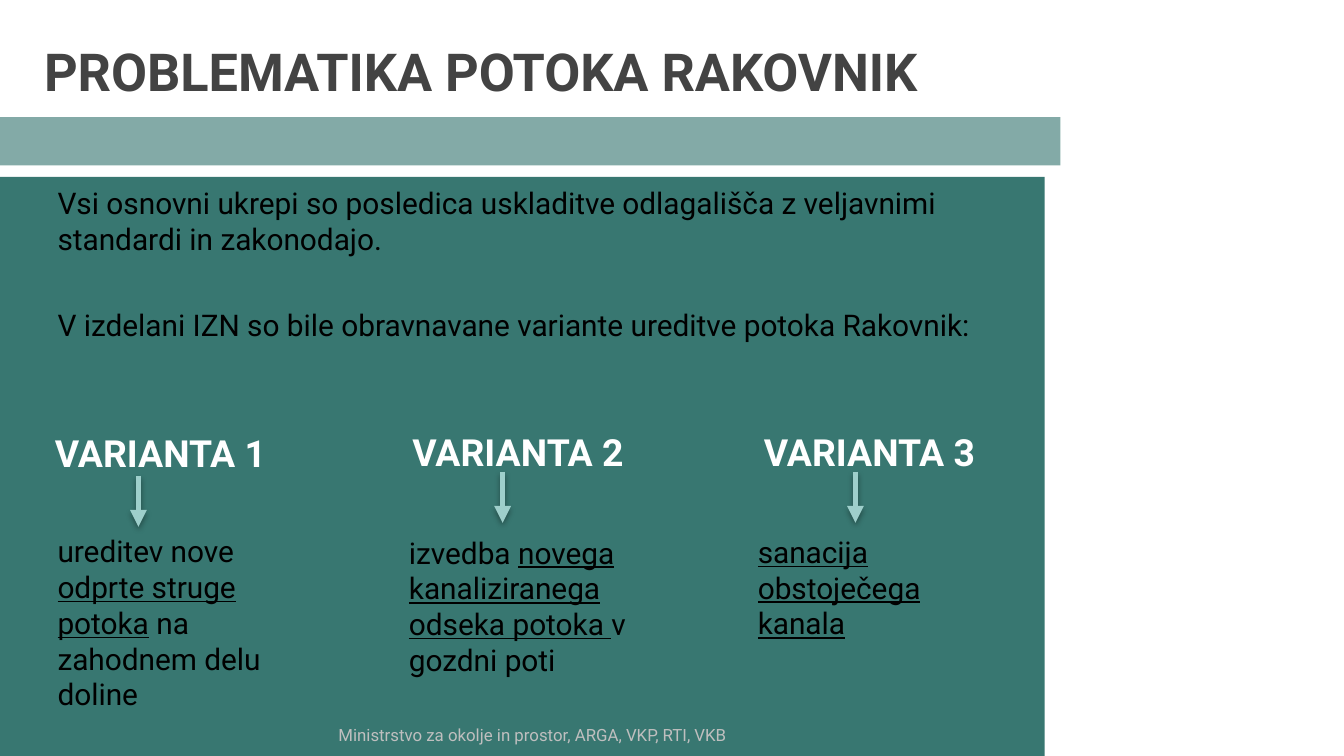
import pptx
import pptx.dml.color
import pptx.enum.shapes
import pptx.enum.text
import pptx.oxml
import pptx.oxml.ns
import pptx.util

COLORS = {
    "title": "434343",
    "teal": "387771",
    "arrow": "9ECFCB",
    "body": "000000",
    "heading": "FFFFFF",
    "footer": "BFBFBF",
    "shadow": "000000",
}
FONT = "Roboto"
COLUMNS, ROWS = 100, 56.25
CELL = 0.1
ANCHOR = pptx.enum.text.MSO_ANCHOR

VARIANTS = [
    ("VARIANTA 1", (3.1, 29.25, 20, 34.5), (7.2, 6.15), (0.2, 9.4),
     [("ureditev nove ", False), ("odprte struge potoka", True),
      (" na zahodnem delu doline", False)]),
    ("VARIANTA 2", (29.7, 29.15, 20, 33), (7.7, 5.95), (-0.25, 9.6),
     [("izvedba ", False), ("novega kanaliziranega odseka potoka ", True),
      ("v gozdni poti", False)]),
    ("VARIANTA 3", (55.85, 29.15, 20, 30.8), (7.8, 5.95), (-0.45, 9.55),
     [("sanacija obstoječega kanala", True)]),
]


def grid(*cells):
    return [pptx.util.Inches(c * CELL) for c in cells]


def rgb(name):
    return pptx.dml.color.RGBColor.from_string(COLORS[name])


def add_text(slide, text, box, size=16, color="body", bold=False,
             anchor=ANCHOR.TOP, inset=1):
    runs = [(text, False)] if isinstance(text, str) else text
    tf = slide.shapes.add_textbox(*grid(*box)).text_frame
    tf.word_wrap = True
    tf.vertical_anchor = anchor
    tf.margin_left, tf.margin_top, tf.margin_right, tf.margin_bottom = grid(1, inset, 1, inset)
    p = tf.paragraphs[0]
    for words, underline in runs:
        r = p.add_run()
        r.text = words
        r.font.name = FONT
        r.font.size = pptx.util.Pt(size)
        r.font.bold = bold
        r.font.underline = underline
        r.font.color.rgb = rgb(color)


def add_panel(slide, box, color, opacity=100):
    sp = slide.shapes.add_shape(pptx.enum.shapes.MSO_SHAPE.RECTANGLE, *grid(*box))
    sp.shadow.inherit = False
    sp.fill.solid()
    sp.fill.fore_color.rgb = rgb(color)
    sp.line.fill.background()
    if opacity < 100:
        clr = sp.fill._xPr.find(".//" + pptx.oxml.ns.qn("a:srgbClr"))
        alpha = clr.makeelement(pptx.oxml.ns.qn("a:alpha"), {"val": str(opacity * 1000)})
        clr.append(alpha)


def add_arrow(slide, x, top, length):
    line = slide.shapes.add_connector(
        pptx.enum.shapes.MSO_CONNECTOR.STRAIGHT, *grid(x, top, x, top + length))
    line.line.width = pptx.util.Pt(3)
    line.line.color.rgb = rgb("arrow")
    ns = pptx.oxml.ns.nsdecls("a")
    line.line._get_or_add_ln().append(
        pptx.oxml.parse_xml(f'<a:tailEnd {ns} type="triangle"/>'))
    blur, dist = pptx.util.Pt(3.1), pptx.util.Pt(1.8)
    line._element.spPr.append(pptx.oxml.parse_xml(
        f'<a:effectLst {ns}><a:outerShdw blurRad="{blur}" dist="{dist}" dir="5400000" '
        f'rotWithShape="0"><a:srgbClr val="{COLORS["shadow"]}"><a:alpha val="35000"/>'
        '</a:srgbClr></a:outerShdw></a:effectLst>'))


def add_header(slide, box):
    x, y, w, h = box
    add_text(slide, "PROBLEMATIKA POTOKA RAKOVNIK", (x + 2.3, y + 1.85, w - 11.6, 6.8),
             size=28, color="title", bold=True, anchor=ANCHOR.MIDDLE)
    add_panel(slide, (x, y + h - 3.6, 78.9, 3.6), "teal", opacity=62)


def add_intro(slide, box):
    x, y, w, h = box
    add_text(slide, "Vsi osnovni ukrepi so posledica uskladitve odlagališča "
             "z veljavnimi standardi in zakonodajo.", (x, y, w, 6.4), inset=0.5)
    add_text(slide, "V izdelani IZN so bile obravnavane variante ureditve potoka Rakovnik:",
             (x, y + h - 3.7, w, 3.7), inset=0.5)


def add_variant(slide, box, heading, arrow, body_offset, body):
    x, y, w, h = box
    arrow_x, arrow_y = arrow
    body_x, body_y = body_offset
    add_text(slide, heading, (x, y, w, 7.1), size=20, color="heading", bold=True,
             anchor=ANCHOR.BOTTOM)
    add_arrow(slide, x + arrow_x, y + arrow_y, 3.8)
    add_text(slide, body, (x + body_x, y + body_y, w, h - 19.8))


def add_footer(slide, box):
    add_text(slide, "Ministrstvo za okolje in prostor, ARGA, VKP, RTI, VKB", box,
             size=9, color="footer", inset=0.5)


def main():
    prs = pptx.Presentation()
    prs.slide_width, prs.slide_height = grid(COLUMNS, ROWS)
    slide = prs.slides.add_slide(prs.slide_layouts[6])
    add_panel(slide, (-1.2, 13.17, 78.93, 43.9), "teal")
    add_header(slide, (0, 0, COLUMNS, 12.32))
    add_intro(slide, (3.3, 13.27, 71.8, 12.73))
    for heading, box, arrow, body_offset, body in VARIANTS:
        add_variant(slide, box, heading, arrow, body_offset, body)
    add_footer(slide, (24.2, 53.45, 45, 2.5))
    prs.save("out.pptx")


if __name__ == "__main__":
    main()
